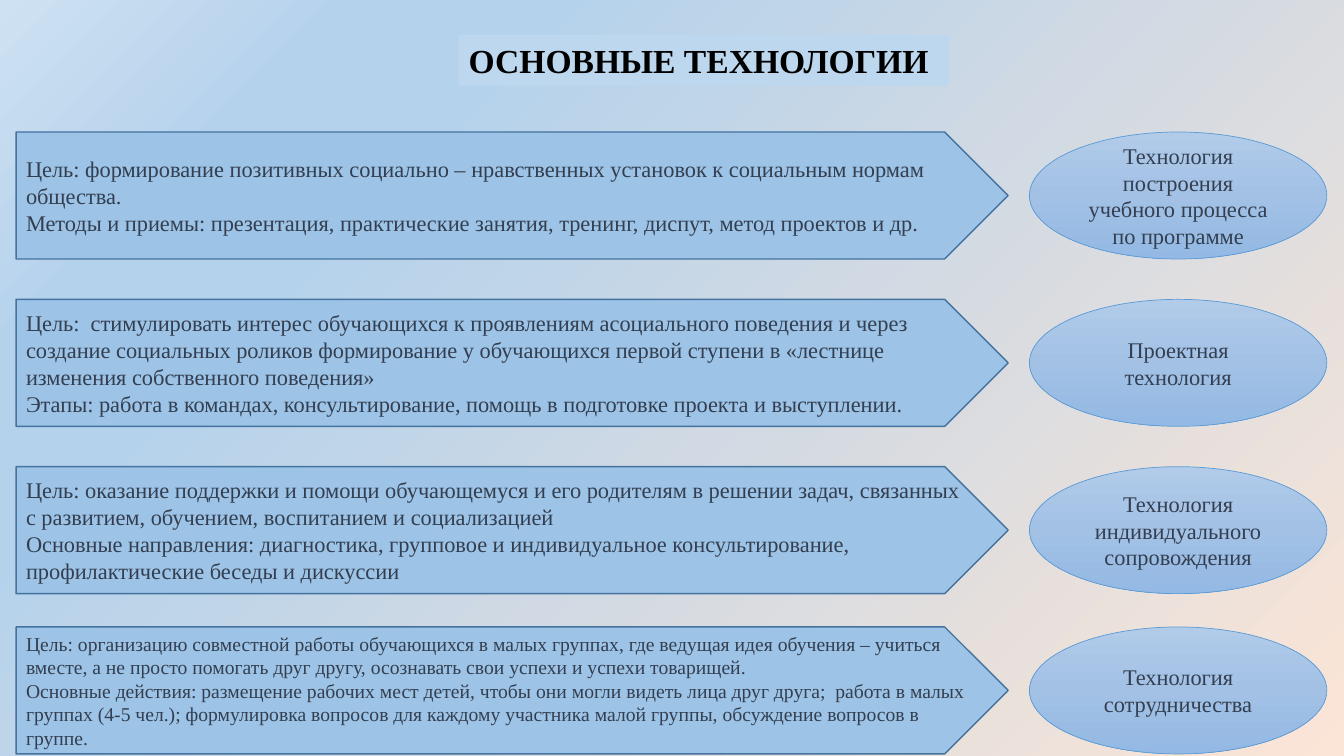
from dataclasses import dataclass

from pptx import Presentation
from pptx.dml.color import RGBColor
from pptx.enum.shapes import MSO_SHAPE
from pptx.enum.text import MSO_ANCHOR, PP_ALIGN
from pptx.oxml import parse_xml
from pptx.oxml.ns import nsdecls, qn
from pptx.shapes.autoshape import Shape
from pptx.slide import Slide
from pptx.util import Inches, Pt

FONT = "Times New Roman"
BLACK = RGBColor(0x00, 0x00, 0x00)
SLATE = RGBColor(0x33, 0x3F, 0x50)
TITLE_FILL = RGBColor(0xBD, 0xD7, 0xEE)
ARROW_FILL = RGBColor(0x9D, 0xC3, 0xE6)
ARROW_LINE = RGBColor(0x43, 0x73, 0x9E)
OVAL_LINE = RGBColor(0x5B, 0x9B, 0xD5)
OVAL_STOPS = [
    (0, RGBColor(0xB1, 0xCB, 0xE9)),
    (50, RGBColor(0xA3, 0xC1, 0xE5)),
    (100, RGBColor(0x93, 0xB9, 0xE4)),
]
BACKGROUND_STOPS = [
    (0, RGBColor(0xFB, 0xE5, 0xD6)),
    (74, RGBColor(0xB5, 0xD2, 0xEC)),
    (83, RGBColor(0xB5, 0xD2, 0xEC)),
    (100, RGBColor(0xCE, 0xE1, 0xF2)),
]
DOWNWARD = '<a:lin ang="5400000" scaled="0"/>'
FROM_BOTTOM_RIGHT = '<a:path path="circle"><a:fillToRect l="100000" t="100000"/></a:path>'

ROW_HEIGHT = 1.26


@dataclass(frozen=True)
class Technology:
    top: float
    name: str
    details: tuple[str, ...]
    size: int = 16


TECHNOLOGIES = [
    Technology(1.31, "Технология построения учебного процесса по программе", (
        "Цель: формирование позитивных социально – нравственных установок к социальным нормам общества.",
        "Методы и приемы: презентация, практические занятия, тренинг, диспут, метод проектов и др.",
    )),
    Technology(2.97, "Проектная технология", (
        "Цель:  стимулировать интерес обучающихся к проявлениям асоциального поведения и через "
        "создание социальных роликов формирование у обучающихся первой ступени в «лестнице "
        "изменения собственного поведения»",
        "Этапы: работа в командах, консультирование, помощь в подготовке проекта и выступлении.",
    )),
    Technology(4.63, "Технология индивидуального сопровождения", (
        "Цель: оказание поддержки и помощи обучающемуся и его родителям в решении задач, связанных "
        "с развитием, обучением, воспитанием и социализацией",
        "Основные направления: диагностика, групповое и индивидуальное консультирование, "
        "профилактические беседы и дискуссии",
    )),
    Technology(6.22, "Технология сотрудничества", (
        "Цель: организацию совместной работы обучающихся в малых группах, где ведущая идея обучения – учиться "
        "вместе, а не просто помогать друг другу, осознавать свои успехи и успехи товарищей.",
        "Основные действия: размещение рабочих мест детей, чтобы они могли видеть лица друг друга;  работа в малых "
        "группах (4-5 чел.); формулировка вопросов для каждому участника малой группы, обсуждение вопросов в "
        "группе.",
    ), size=14),
]


def gradient_xml(stops: list[tuple[int, RGBColor]], direction: str, namespaces: str = "") -> str:
    stop_list = "".join(
        f'<a:gs pos="{position * 1000}"><a:srgbClr val="{color}"/></a:gs>'
        for position, color in stops
    )
    return f'<a:gradFill {namespaces} rotWithShape="1"><a:gsLst>{stop_list}</a:gsLst>{direction}</a:gradFill>'


def set_background(slide: Slide) -> None:
    gradient = gradient_xml(BACKGROUND_STOPS, FROM_BOTTOM_RIGHT)
    background = parse_xml(
        f'<p:bg {nsdecls("p", "a")}><p:bgPr>{gradient}<a:effectLst/></p:bgPr></p:bg>'
    )
    slide.element.find(qn("p:cSld")).insert(0, background)


def add_box(slide: Slide, kind: MSO_SHAPE, left: float, top: float, width: float, height: float) -> Shape:
    shape = slide.shapes.add_shape(kind, Inches(left), Inches(top), Inches(width), Inches(height))
    shape.shadow.inherit = False
    return shape


def write_text(shape: Shape, lines: tuple[str, ...], *, size: int = 16, color: RGBColor = SLATE,
               bold: bool = False, align: PP_ALIGN = PP_ALIGN.LEFT,
               anchor: MSO_ANCHOR = MSO_ANCHOR.MIDDLE) -> None:
    frame = shape.text_frame
    frame.word_wrap = True
    frame.vertical_anchor = anchor
    frame.text = "\n".join(lines)
    for paragraph in frame.paragraphs:
        paragraph.alignment = align
        font = paragraph.runs[0].font
        font.name, font.size, font.bold = FONT, Pt(size), bold
        font.color.rgb = color


def set_outline(shape: Shape, color: RGBColor, width: float) -> None:
    shape.line.color.rgb = color
    shape.line.width = Pt(width)


def add_title(slide: Slide) -> None:
    title = add_box(slide, MSO_SHAPE.RECTANGLE, 4.55, 0.35, 4.86, 0.5)
    title.fill.solid()
    title.fill.fore_color.rgb = TITLE_FILL
    title.line.fill.background()
    write_text(title, ("ОСНОВНЫЕ ТЕХНОЛОГИИ",), size=24, color=BLACK, bold=True, anchor=MSO_ANCHOR.TOP)


def add_technology(slide: Slide, technology: Technology) -> None:
    # Oval with the name
    oval = add_box(slide, MSO_SHAPE.OVAL, 10.21, technology.top, 2.95, ROW_HEIGHT)
    gradient = parse_xml(gradient_xml(OVAL_STOPS, DOWNWARD, nsdecls("a")))
    oval.element.spPr.find(qn("a:prstGeom")).addnext(gradient)
    set_outline(oval, OVAL_LINE, 0.5)
    write_text(oval, (technology.name,), align=PP_ALIGN.CENTER)

    # Arrow with the goal and methods
    arrow = add_box(slide, MSO_SHAPE.PENTAGON, 0.16, technology.top, 9.84, ROW_HEIGHT)
    arrow.fill.solid()
    arrow.fill.fore_color.rgb = ARROW_FILL
    set_outline(arrow, ARROW_LINE, 1)
    write_text(arrow, technology.details, size=technology.size)


def main() -> None:
    presentation = Presentation()
    presentation.slide_width = Inches(13.33)
    presentation.slide_height = Inches(7.5)
    slide = presentation.slides.add_slide(presentation.slide_layouts[6])
    set_background(slide)
    add_title(slide)
    for technology in TECHNOLOGIES:
        add_technology(slide, technology)
    presentation.save("out.pptx")


if __name__ == "__main__":
    main()
